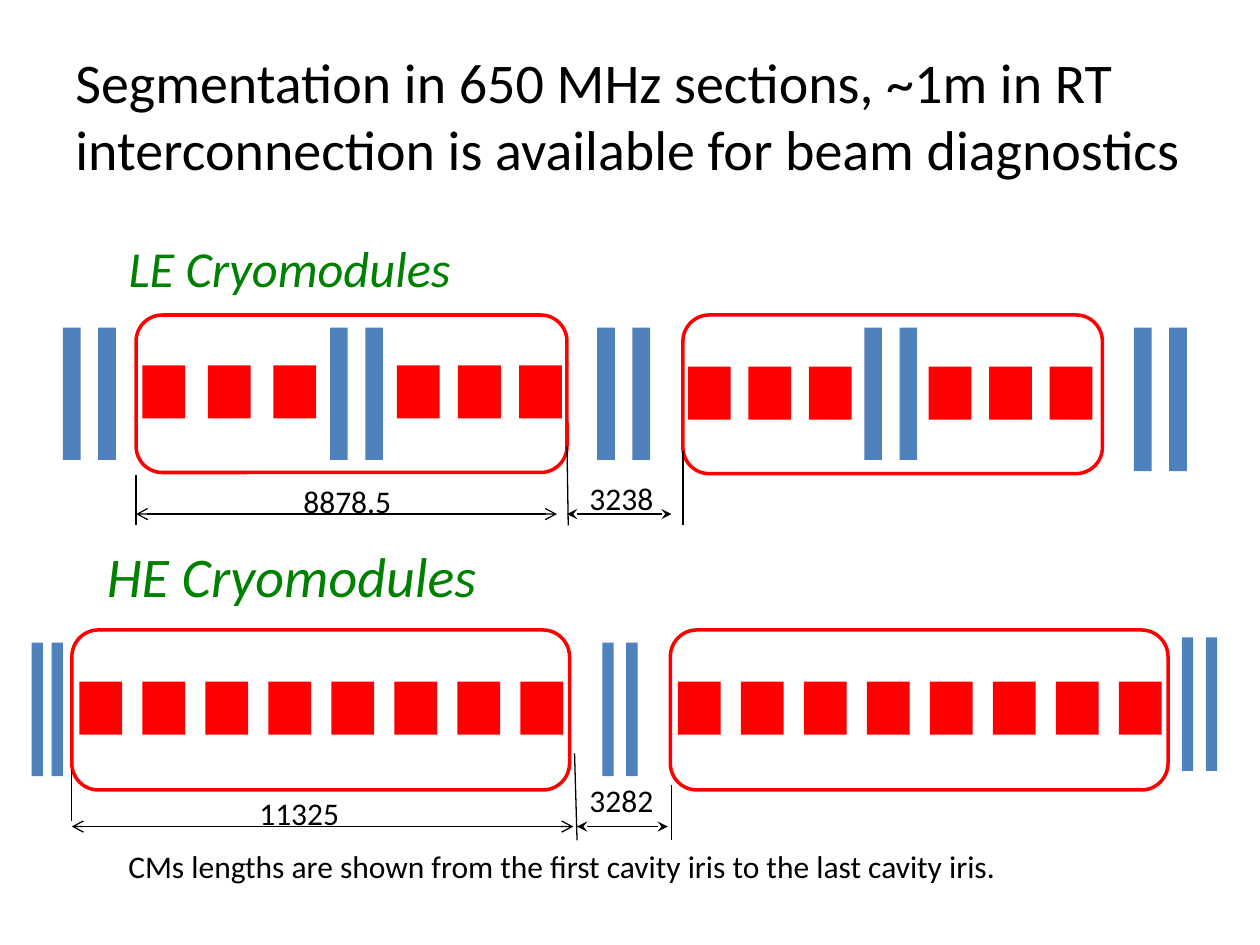
from dataclasses import dataclass

from lxml import etree
from pptx import Presentation
from pptx.dml.color import RGBColor
from pptx.enum.shapes import MSO_CONNECTOR, MSO_SHAPE
from pptx.enum.text import MSO_ANCHOR, PP_ALIGN
from pptx.oxml.ns import qn
from pptx.util import Inches, Pt

RECTANGLE = MSO_SHAPE.RECTANGLE
ROUNDED = MSO_SHAPE.ROUNDED_RECTANGLE
STRAIGHT = MSO_CONNECTOR.STRAIGHT
LEFT = PP_ALIGN.LEFT
MIDDLE, TOP = MSO_ANCHOR.MIDDLE, MSO_ANCHOR.TOP


@dataclass(frozen=True)
class Theme:
    font: str = "Calibri"
    ink: RGBColor = RGBColor(0, 0, 0)
    section: RGBColor = RGBColor(0, 0x80, 0)
    cavity: RGBColor = RGBColor(0xFF, 0, 0)
    magnet: RGBColor = RGBColor(0x4F, 0x81, 0xBD)
    headline_size: float = 32
    le_size: float = 28.8
    label_size: float = 18
    module_line: float = 2
    dimension_line: float = 0.75


@dataclass(frozen=True)
class Box:
    left: float
    top: float
    width: float
    height: float

    def lengths(self):
        return [Inches(v) for v in (self.left, self.top, self.width, self.height)]


THEME = Theme()


def write(frame, text, size, color=THEME.ink, italic=False, anchor=TOP):
    frame.word_wrap = True
    frame.vertical_anchor = anchor
    paragraph = frame.paragraphs[0]
    paragraph.text = text
    paragraph.alignment = LEFT
    font = paragraph.font
    font.name, font.size, font.italic = THEME.font, Pt(size), italic
    font.color.rgb = color


def add_label(shapes, box, text, size=THEME.label_size, **style):
    write(shapes.add_textbox(*box.lengths()).text_frame, text, size, **style)


def add_block(shapes, box, color):
    block = shapes.add_shape(RECTANGLE, *box.lengths())
    block.shadow.inherit = False
    block.fill.solid()
    block.fill.fore_color.rgb = color
    block.line.fill.background()


def add_rule(shapes, start, end, arrow=None):
    rule = shapes.add_connector(STRAIGHT, *(Inches(v) for v in start + end))
    rule.line.color.rgb = THEME.ink
    rule.line.width = Pt(THEME.dimension_line)
    if arrow:
        outline = rule.line._get_or_add_ln()
        for end_tag in ("a:headEnd", "a:tailEnd"):
            etree.SubElement(outline, qn(end_tag), type=arrow)
    etree.SubElement(rule._element.spPr, qn("a:effectLst"))


def add_magnet_pair(shapes, box, bar_width):
    for left in (box.left, box.left + box.width - bar_width):
        add_block(shapes, Box(left, box.top, bar_width, box.height), THEME.magnet)


def add_module(shapes, box, cavity_top, cavity_runs):
    for offset, step, count in cavity_runs:
        for i in range(count):
            cavity = Box(box.left + offset + i * step, box.top + cavity_top, 0.34, 0.42)
            add_block(shapes, cavity, THEME.cavity)
    shell = shapes.add_shape(ROUNDED, *box.lengths())
    shell.shadow.inherit = False
    shell.fill.background()
    shell.line.color.rgb = THEME.cavity
    shell.line.width = Pt(THEME.module_line)


def add_dimension(shapes, start, end, y, arrow, label, label_box):
    add_rule(shapes, (start, y), (end, y), arrow)
    add_label(shapes, label_box, label)


def add_le_row(slide, box):
    shapes = slide.shapes.add_group_shape().shapes
    magnet_top = box.top + 0.1
    for i in range(4):
        add_magnet_pair(shapes, Box(box.left + 2.12 * i, magnet_top, 0.42, 1.05), 0.14)
    add_magnet_pair(shapes, Box(box.left + 8.5, magnet_top, 0.42, 1.14), 0.14)

    first = Box(box.left + 0.58, box.top, 3.42, 1.25)
    second = Box(box.left + 4.92, box.top, 3.33, 1.26)
    add_module(shapes, first, 0.4, [(0.05, 0.52, 3), (2.07, 0.485, 3)])
    add_module(shapes, second, 0.41, [(0.04, 0.48, 3), (1.95, 0.48, 3)])

    bottom = box.top + box.height
    first_end = first.left + first.width
    add_rule(shapes, (first.left, box.top + 1.27), (first.left, bottom))
    add_rule(shapes, (first_end, box.top + 1.04), (first_end + 0.01, bottom))
    add_rule(shapes, (second.left, box.top + 1.08), (second.left, bottom))
    y = bottom - 0.09
    add_dimension(shapes, first.left, first_end - 0.08, y, "arrow", "8878.5",
                  Box(first.left + 1.23, y - 0.3, 1.1, 0.38))
    add_dimension(shapes, first_end, second.left - 0.09, y, "stealth", "3238",
                  Box(first_end + 0.08, y - 0.33, 1.08, 0.4))


def add_he_row(slide, box):
    shapes = slide.shapes.add_group_shape().shapes
    for offset, drop, width in ((0, 0.1, 0.25), (4.53, 0.1, 0.28), (9.13, 0.06, 0.28)):
        pair = Box(box.left + offset, box.top + drop, width, 1.06)
        add_magnet_pair(shapes, pair, 0.09)

    first = Box(box.left + 0.32, box.top, 3.95, 1.27)
    second = Box(box.left + 5.07, box.top, 3.95, 1.27)
    for module in (first, second):
        add_module(shapes, module, 0.41, [(0.06, 0.5, 8)])

    bottom = box.top + box.height
    first_end = first.left + first.width + 0.04
    add_rule(shapes, (first.left, box.top + 1.11), (first.left, box.top + 1.52))
    add_rule(shapes, (first_end, box.top + 0.98), (first_end + 0.02, bottom))
    add_rule(shapes, (second.left + 0.01, box.top + 1.23), (second.left + 0.01, bottom))
    y = bottom - 0.11
    add_dimension(shapes, first.left, first_end - 0.01, y, "arrow", "11325",
                  Box(first.left + 1.39, y - 0.31, 1.21, 0.4))
    add_dimension(shapes, first_end + 0.02, second.left - 0.02, y, "stealth", "3282",
                  Box(first_end + 0.02, y - 0.41, 0.75, 0.4))


def add_le_title(slide, box):
    title = slide.shapes.title
    title.left, title.top, title.width, title.height = box.lengths()
    write(title.text_frame, "LE Cryomodules", THEME.le_size,
          color=THEME.section, italic=True, anchor=MIDDLE)


def main():
    deck = Presentation()
    deck.slide_width, deck.slide_height = Inches(10), Inches(7.5)
    slide = deck.slides.add_slide(deck.slide_layouts.get_by_name("Title Only"))

    add_label(slide.shapes, Box(0.5, 0.33, 9.08, 1.18),
              "Segmentation in 650 MHz sections, ~1m in RT "
              "interconnection is available for beam diagnostics",
              THEME.headline_size)
    add_le_title(slide, Box(0.92, 1.83, 3.58, 0.58))
    add_le_row(slide, Box(0.5, 2.5, 8.92, 1.67))
    add_label(slide.shapes, Box(0.75, 4.25, 3.67, 0.64), "HE Cryomodules",
              THEME.headline_size, color=THEME.section, italic=True)
    add_he_row(slide, Box(0.25, 5, 9.41, 1.67))
    add_label(slide.shapes, Box(0.92, 6.67, 7.25, 0.4),
              "CMs lengths are shown from the first cavity iris to the last cavity iris.")
    deck.save("out.pptx")


if __name__ == "__main__":
    main()
